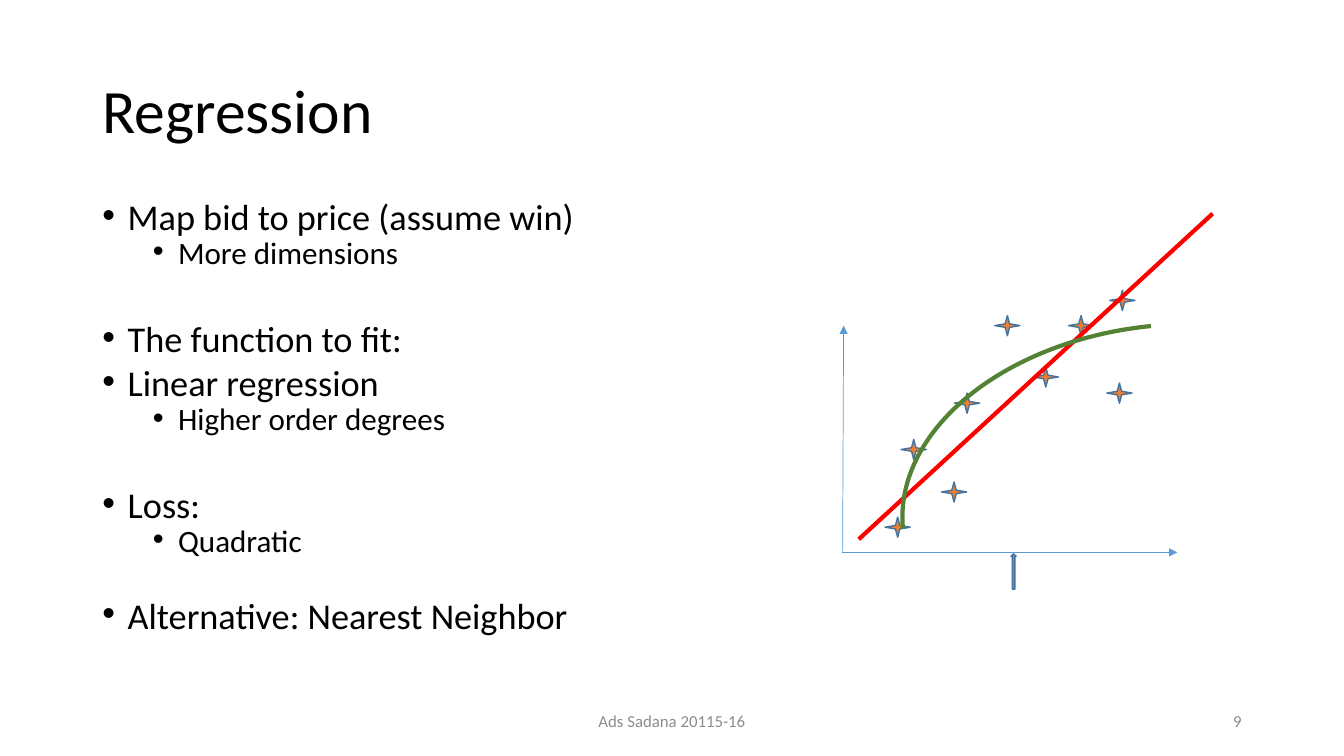
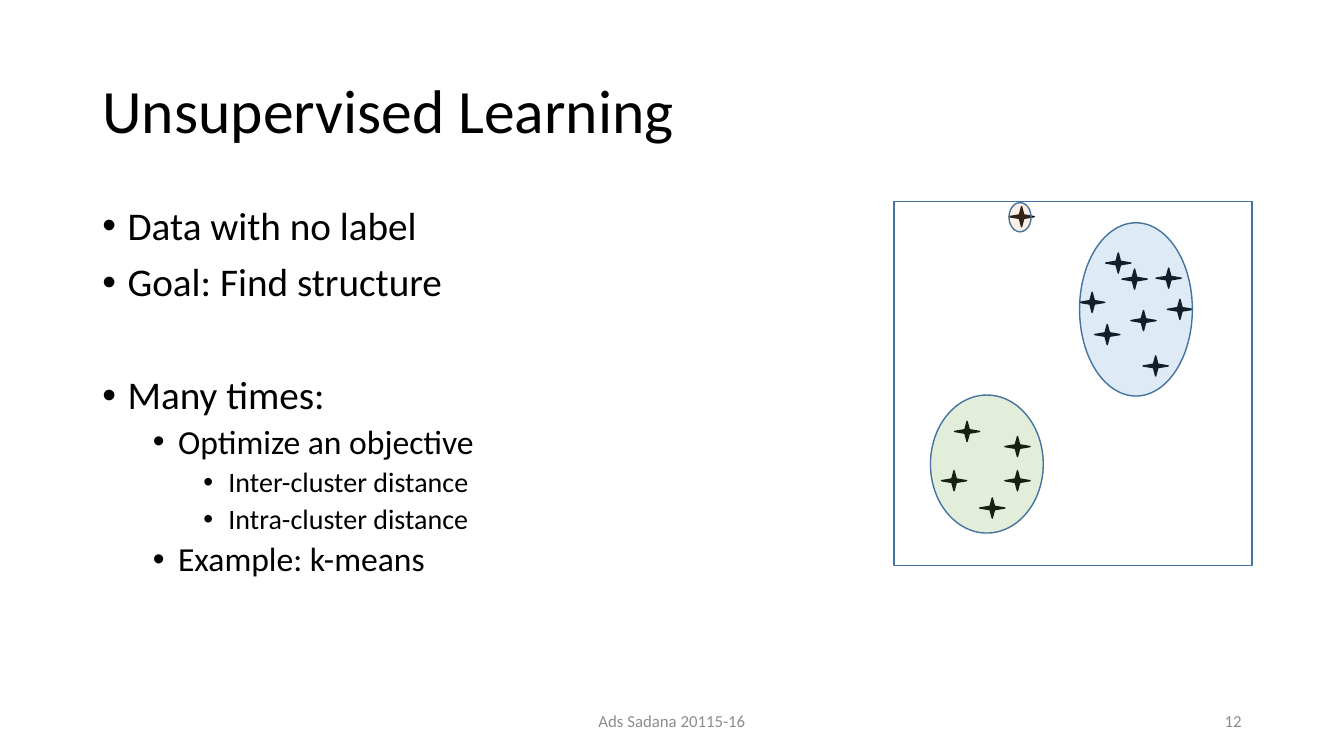
from lxml.etree import SubElement
from pptx import Presentation
from pptx.dml.color import RGBColor
from pptx.enum.shapes import MSO_CONNECTOR as Connector, MSO_SHAPE as Shape
from pptx.enum.text import MSO_ANCHOR as Anchor, MSO_AUTO_SIZE as AutoSize, PP_ALIGN as Align
from pptx.oxml.ns import qn
from pptx.util import Pt

BLACK = RGBColor(0x00, 0x00, 0x00)
GREY = RGBColor(0x8C, 0x8C, 0x8C)
BLUE = RGBColor(0x5B, 0x9B, 0xD5)
OUTLINE = RGBColor(0x43, 0x73, 0x9E)
ORANGE = RGBColor(0xED, 0x7D, 0x31)
PEACH = RGBColor(0xF4, 0xB1, 0x83)
GREEN = RGBColor(0x70, 0xAD, 0x47)
DARK_GREEN = RGBColor(0x54, 0x82, 0x35)
RED = RGBColor(0xFF, 0x00, 0x00)
FONT = "Calibri"
STAR_SIZE = (18, 14.4)


def add_figure(slide, kind, box, line, width=1, fill=None, opacity=100):
    figure = slide.shapes.add_shape(kind, *map(Pt, box))
    figure.shadow.inherit = False
    figure.line.color.rgb = line
    figure.line.width = Pt(width)
    if fill is None:
        figure.fill.background()
    else:
        figure.fill.solid()
        figure.fill.fore_color.rgb = fill
        if opacity < 100:
            color = figure._element.spPr.find(qn("a:solidFill"))[0]
            SubElement(color, qn("a:alpha"), val=str(opacity * 1000))
    return figure


def add_line(slide, ends, color, width, arrow=False):
    line = slide.shapes.add_connector(Connector.STRAIGHT, *map(Pt, ends))
    line.line.color.rgb = color
    line.line.width = Pt(width)
    if arrow:
        SubElement(line.line._get_or_add_ln(), qn("a:tailEnd"), type="triangle")
    SubElement(line._element.spPr, qn("a:effectLst"))


topics = [
    ("Regression", "9", 0.7, (25.9, 22.2), [
        (0, "Map bid to price (assume win)", 0),
        (1, "More dimensions", 0),
        (0, "The function to fit:", 31.5),
        (0, "Linear regression", 0),
        (1, "Higher order degrees", 0),
        (0, "Loss:", 31.5),
        (1, "Quadratic", 0),
        (0, "Alternative: Nearest Neighbor", 23.5),
    ]),
    ("Unsupervised Learning", "12", 0.9, (28, 24, 20), [
        (0, "Data with no label", 0),
        (0, "Goal: Find structure", 0),
        (0, "Many times:", 40.5),
        (1, "Optimize an objective", 0),
        (2, "Inter-cluster distance", 0),
        (2, "Intra-cluster distance", 0),
        (1, "Example: k-means", 0),
    ]),
]

deck = Presentation()
deck.slide_width, deck.slide_height = Pt(960), Pt(540)
slides = []

for heading, number, spacing, sizes, points in topics:
    slide = deck.slides.add_slide(deck.slide_layouts[1])
    slides.append(slide)

    title, body = slide.placeholders
    title.left, title.top, title.width, title.height = map(Pt, (66, 28.8, 828, 104.4))
    title.text_frame.text = heading
    title.text_frame.vertical_anchor = Anchor.MIDDLE
    title.text_frame.auto_size = AutoSize.NONE
    title_line = title.text_frame.paragraphs[0]
    title_line.alignment = Align.LEFT
    title_line.line_spacing = 0.9
    title_font = title_line.runs[0].font
    title_font.name, title_font.size, title_font.color.rgb = FONT, Pt(44), BLACK

    body.left, body.top, body.width, body.height = map(Pt, (66, 143.8, 828, 342.6))
    body.text_frame.text = "\n".join(text for _, text, _ in points)
    body.text_frame.auto_size = AutoSize.NONE
    for paragraph, (level, _, gap) in zip(body.text_frame.paragraphs, points):
        paragraph.level = level
        paragraph.line_spacing = spacing
        paragraph.space_before = Pt((5 if level else 10) + gap)
        paragraph.space_after = Pt(0)
        properties = paragraph._p.get_or_add_pPr()
        properties.set("marL", str(Pt(18 + 36 * level)))
        properties.set("indent", str(Pt(-18)))
        SubElement(properties, qn("a:buFont"), typeface="Arial")
        SubElement(properties, qn("a:buChar"), char="•")
        font = paragraph.runs[0].font
        font.name, font.size, font.color.rgb = FONT, Pt(sizes[level]), BLACK

    for left, width, text, alignment in [
        (318, 324, "Ads Sadana 20115-16", Align.CENTER),
        (678, 216, number, Align.RIGHT),
    ]:
        footer = slide.shapes.add_textbox(Pt(left), Pt(500.5), Pt(width), Pt(28.8)).text_frame
        footer.word_wrap = True
        footer.vertical_anchor = Anchor.MIDDLE
        footer.text = text
        footer.paragraphs[0].alignment = alignment
        font = footer.paragraphs[0].runs[0].font
        font.name, font.size, font.color.rgb = FONT, Pt(12), GREY

regression, clustering = slides

for axis in [(601.2, 394.6, 841, 394.6), (601.9, 394.6, 602.6, 232.6)]:
    add_line(regression, axis, BLUE, 0.5, arrow=True)

samples = [
    (632.2, 369.4), (643.7, 313.9), (681.8, 280.8), (672.5, 344.2), (738, 262.1),
    (710.6, 225.4), (790.6, 273.6), (792.7, 207.4), (763.2, 225.4),
]
for sample in samples:
    add_figure(regression, Shape.STAR_4_POINT, sample + STAR_SIZE, OUTLINE, fill=ORANGE)

add_line(regression, (866.2, 152.6, 613.4, 385.2), RED, 3)
add_figure(regression, Shape.UP_ARROW, (722.2, 395.6, 3.6, 25.2), OUTLINE, fill=BLUE)
curve = add_figure(regression, Shape.ARC, (707.8, 168.5, 253.4, 380.9), DARK_GREEN, 3)
curve.rotation = 264.4

add_figure(clustering, Shape.RECTANGLE, (638.6, 144, 255.6, 259.9), OUTLINE)

clusters = [
    ((771.1, 159.1, 80.6, 123.8), BLUE, [
        (789.8, 180.7), (801.4, 192.2), (816.5, 254.2), (781.9, 231.8),
        (807.8, 221.8), (771.1, 208.8), (833.8, 213.8), (825.8, 191.5),
    ]),
    ((664.6, 282.2, 80.6, 98.6), GREEN, [
        (681.8, 301), (699.8, 355.7), (717.8, 311.8), (717.8, 336.2), (672.5, 336.2),
    ]),
    ((720.7, 144.7, 15.8, 20.9), PEACH, [(720.7, 147.6)]),
]
for boundary, tint, members in clusters:
    for member in members:
        add_figure(clustering, Shape.STAR_4_POINT, member + STAR_SIZE, BLACK, fill=BLACK)
    add_figure(clustering, Shape.OVAL, boundary, OUTLINE, fill=tint, opacity=20)

deck.save("out.pptx")
